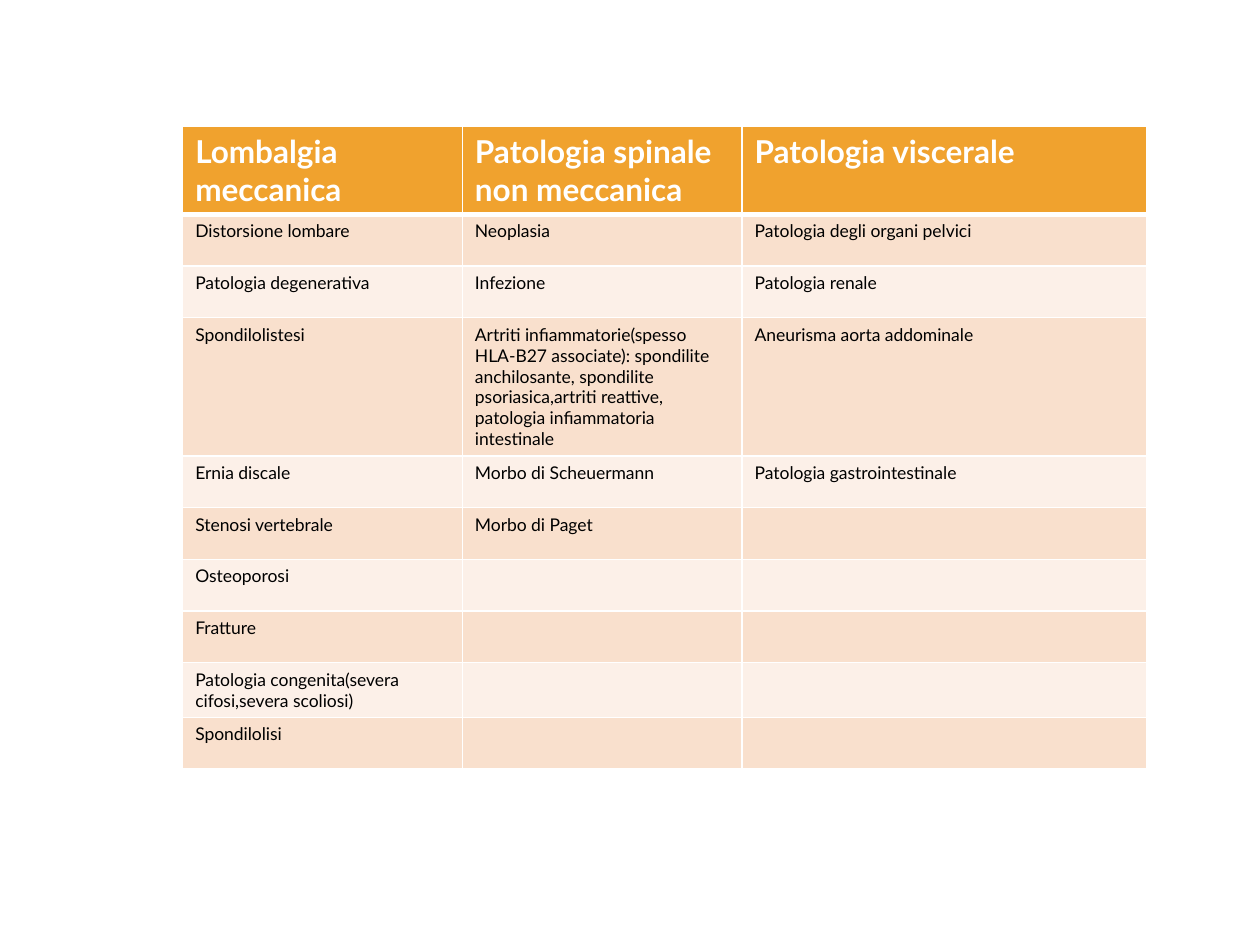
from pptx import Presentation
from pptx.dml.color import RGBColor
from pptx.oxml import parse_xml
from pptx.oxml.ns import nsdecls
from pptx.util import Inches, Pt

COLORS = {
    "head": "F0A22E",
    "odd": "F9E0CD",
    "even": "FCF0E8",
    "white": "FFFFFF",
    "black": "000000",
}
FONT = "Lato"

HEADS = ["Lombalgia meccanica", "Patologia spinale non meccanica", "Patologia viscerale"]
# One list of causes for each heading
CAUSES = [
    ["Distorsione lombare", "Patologia degenerativa", "Spondilolistesi",
     "Ernia discale", "Stenosi vertebrale", "Osteoporosi", "Fratture",
     "Patologia congenita(severa cifosi,severa scoliosi)", "Spondilolisi"],
    ["Neoplasia", "Infezione",
     "Artriti infiammatorie(spesso HLA-B27 associate): spondilite anchilosante, "
     "spondilite psoriasica,artriti reattive, patologia infiammatoria intestinale",
     "Morbo di Scheuermann", "Morbo di Paget"],
    ["Patologia degli organi pelvici", "Patologia renale",
     "Aneurisma aorta addominale", "Patologia gastrointestinale"],
]
WIDTHS = [2.22, 2.22, 3.21]
HEAD_H, ROW_H = 0.15, 0.41


def color(name):
    return RGBColor.from_string(COLORS[name])


def add_borders(cell, top, bottom):
    """White lines on all four sides; they must come before the fill."""
    props = cell._tc.get_or_add_tcPr()
    sides = {"L": 1, "R": 1, "T": top, "B": bottom}
    for i, (side, width) in enumerate(sides.items()):
        props.insert(i, parse_xml(
            f'<a:ln{side} {nsdecls("a")} w="{Pt(width)}"><a:solidFill>'
            f'<a:srgbClr val="{COLORS["white"]}"/></a:solidFill></a:ln{side}>'))


def fill_cell(cell, words, row):
    head = row == 0
    cell.fill.solid()
    cell.fill.fore_color.rgb = color("head" if head else "odd" if row % 2 else "even")
    add_borders(cell, 3 if row == 1 else 1, 3 if head else 1)
    if not words:
        return
    cell.text_frame.text = words
    font = cell.text_frame.paragraphs[0].runs[0].font
    font.name = FONT
    font.size = Pt(18 if head else 10)
    font.bold = head
    font.color.rgb = color("white" if head else "black")


def add_causes(slide, left, top, width, height):
    count = 1 + max(len(col) for col in CAUSES)
    table = slide.shapes.add_table(count, len(HEADS), left, top, width, height).table
    for col, size in zip(table.columns, WIDTHS):
        col.width = Inches(size)
    for r, row in enumerate(table.rows):
        row.height = Inches(ROW_H if r else HEAD_H)
        for c, cell in enumerate(row.cells):
            items = [HEADS[c]] + CAUSES[c]
            fill_cell(cell, items[r] if r < len(items) else "", r)


def main():
    deck = Presentation()
    deck.slide_width, deck.slide_height = Inches(10), Inches(7.5)
    slide = deck.slides.add_slide(deck.slide_layouts[6])
    # Table of causes of back pain
    add_causes(slide, Inches(1.45), Inches(1), Inches(7.66), Inches(5.37))
    deck.save("out.pptx")


if __name__ == "__main__":
    main()
